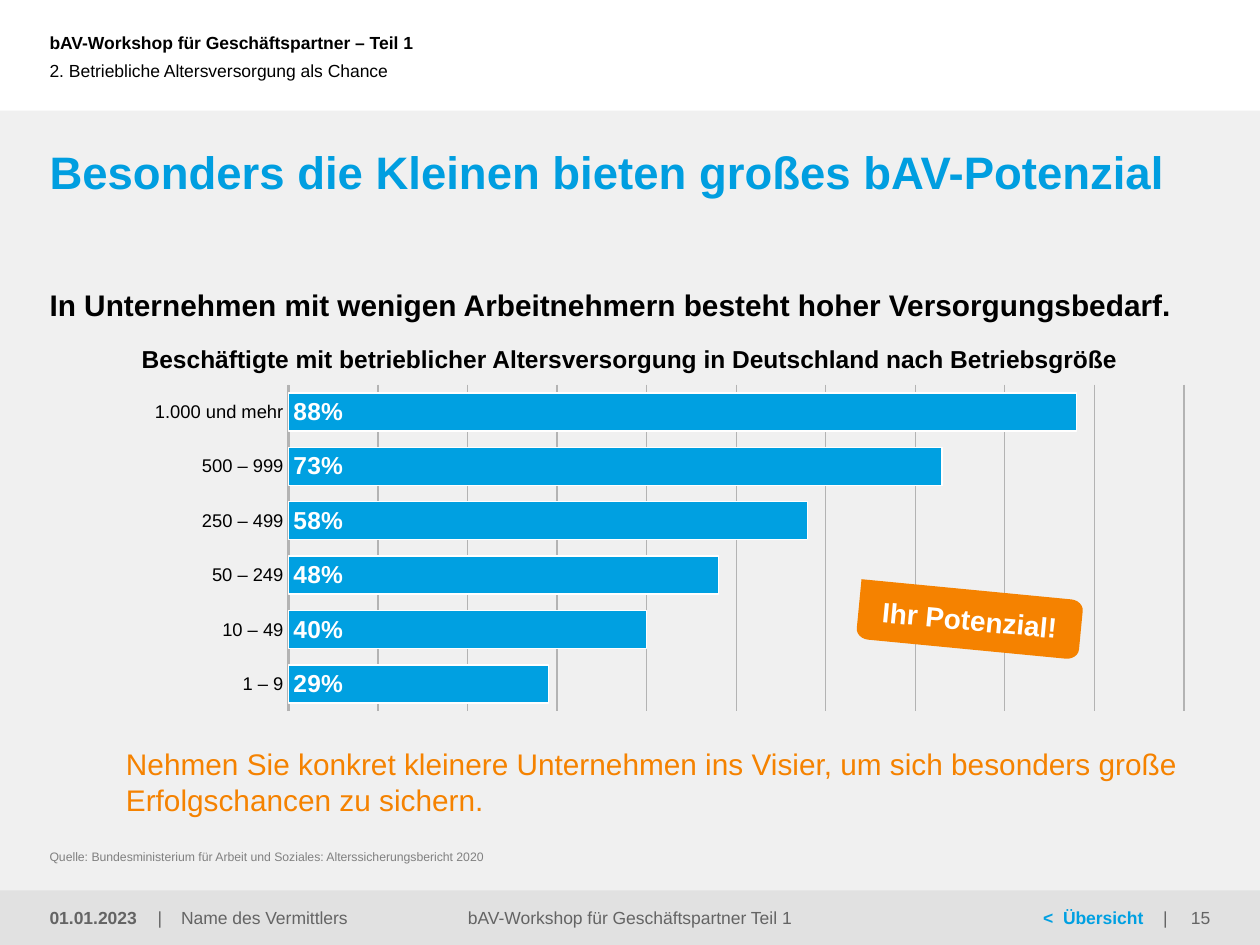
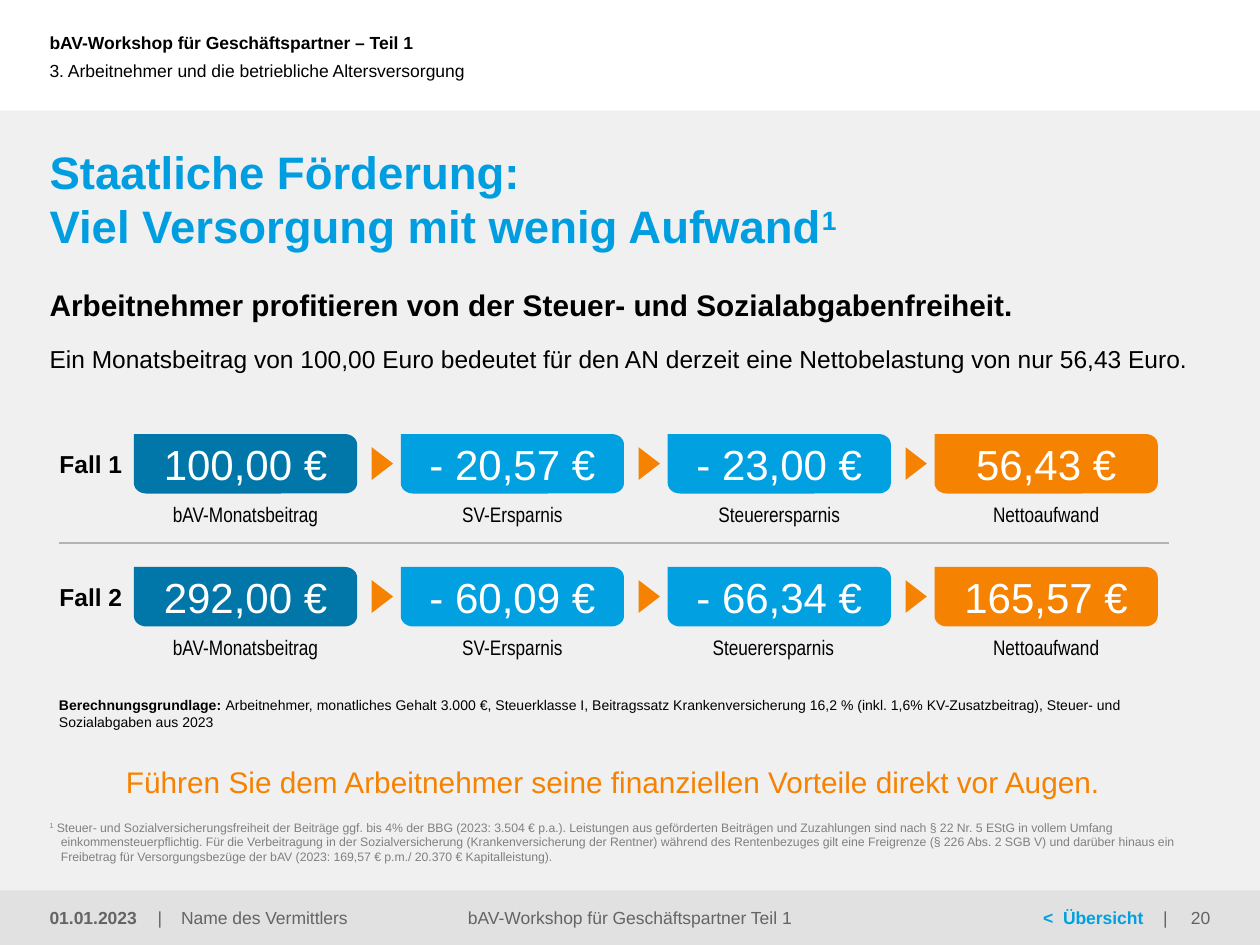
from lxml.etree import SubElement
from pptx import Presentation
from pptx.chart.data import CategoryChartData
from pptx.dml.color import RGBColor
from pptx.enum.chart import XL_CHART_TYPE, XL_LABEL_POSITION, XL_TICK_MARK
from pptx.enum.shapes import MSO_CONNECTOR, MSO_SHAPE
from pptx.enum.text import MSO_ANCHOR, PP_ALIGN
from pptx.oxml.ns import qn
from pptx.util import Cm, Pt

BLACK = RGBColor(0x00, 0x00, 0x00)
WHITE = RGBColor(0xFF, 0xFF, 0xFF)
BLUE = RGBColor(0x00, 0xA0, 0xE1)
HEAD = RGBColor(0x00, 0x9E, 0xE0)
NAVY = RGBColor(0x00, 0x77, 0xA8)
ORANGE = RGBColor(0xF5, 0x82, 0x00)
PALE = RGBColor(0xF0, 0xF0, 0xF0)
FOOT = RGBColor(0xE1, 0xE1, 0xE1)
DARK = RGBColor(0x64, 0x64, 0x64)
GREY = RGBColor(0x80, 0x80, 0x80)
RULE = RGBColor(0xB3, 0xB3, 0xB3)

TOP, MID, LOW = MSO_ANCHOR.TOP, MSO_ANCHOR.MIDDLE, MSO_ANCHOR.BOTTOM
CENTER, RIGHT = PP_ALIGN.CENTER, PP_ALIGN.RIGHT
TAG_W, TAG_H = 4.5, 1.2
ARC_W, ARC_H = 0.25, 0.21


class Deck:
    face = "Arial"
    left, wide = 1, 23.4
    foot_y, foot_h = 17.95, 1.1

    def __init__(self):
        self.show = Presentation()
        self.show.slide_width = Cm(25.4)
        self.show.slide_height = Cm(19.05)
        self.slide = None

    def font(self, font, size, color, bold=False, face=None):
        font.name = face or self.face
        font.size = Pt(size)
        font.bold = bold
        font.color.rgb = color

    def paint(self, shape, color):
        shape.shadow.inherit = False
        shape.fill.solid()
        shape.fill.fore_color.rgb = color
        shape.line.fill.background()

    def block(self, kind, x, y, w, h, color, turn=0):
        shape = self.slide.shapes.add_shape(kind, Cm(x), Cm(y), Cm(w), Cm(h))
        shape.rotation = turn
        self.paint(shape, color)

    def text(self, words, x, y, w, h, size, color=BLACK, bold=False,
             align=None, anchor=TOP, face=None, tabs=(), hang=0):
        box = self.slide.shapes.add_textbox(Cm(x), Cm(y), Cm(w), Cm(h))
        frame = box.text_frame
        frame.word_wrap = True
        frame.vertical_anchor = anchor
        frame.margin_left = frame.margin_right = 0
        frame.margin_top = frame.margin_bottom = 0
        para = frame.paragraphs[0]
        para.alignment = align
        props = para._p.get_or_add_pPr()
        if hang:
            props.set("marL", str(Cm(hang)))
            props.set("indent", str(-Cm(hang)))
        if tabs:
            stops = SubElement(props, qn("a:tabLst"))
            for stop in tabs:
                SubElement(stops, qn("a:tab"), pos=str(Cm(stop)), algn="l")
        self.font(para.font, size, color, bold, face)
        if isinstance(words, str):
            para.text = words
            return
        for part, look in words:
            run = para.add_run()
            run.text = part
            if "bold" in look:
                run.font.bold = look["bold"]
            if "color" in look:
                run.font.color.rgb = look["color"]
            if look.get("sup"):
                run._r.get_or_add_rPr().set("baseline", "30000")
            if look.get("end"):
                para.add_line_break()

    def tag(self, label, x, y, color, size, bold=False, turn=0):
        end, base = x + TAG_W, y + TAG_H
        spots = [(x, y), (end - ARC_W, y), (end, y + ARC_H),
                 (end, base - ARC_H), (end - ARC_W, base),
                 (x + ARC_W, base), (x, base - ARC_H)]
        spots = [(Cm(a), Cm(b)) for a, b in spots]
        pen = self.slide.shapes.build_freeform(*spots[0])
        pen.add_line_segments(spots[1:])
        shape = pen.convert_to_shape()
        steps = list(shape._element.iter(qn("a:lnTo")))
        for step, start in zip(steps[1:6:2], (270, 0, 90)):
            arc = SubElement(step.getparent(), qn("a:arcTo"),
                             wR=str(Cm(ARC_W)), hR=str(Cm(ARC_H)),
                             stAng=str(start * 60000), swAng=str(90 * 60000))
            step.getparent().replace(step, arc)
        shape.rotation = turn
        self.paint(shape, color)
        shape.text_frame.vertical_anchor = MID
        para = shape.text_frame.paragraphs[0]
        para.alignment = CENTER
        self.font(para.font, size, WHITE, bold)
        para.text = label

    def line(self, x, y, end):
        line = self.slide.shapes.add_connector(
            MSO_CONNECTOR.STRAIGHT, Cm(x), Cm(y), Cm(end), Cm(y))
        line.line.color.rgb = RULE
        line.line.width = Pt(1)
        SubElement(line._element.spPr, qn("a:effectLst"))

    def bars(self, names, rates, x, y, w, h, plot_box):
        data = CategoryChartData(number_format="0%")
        data.categories = names
        data.add_series("Series 1", rates)
        chart = self.slide.shapes.add_chart(
            XL_CHART_TYPE.BAR_STACKED, Cm(x), Cm(y), Cm(w), Cm(h), data).chart
        chart.has_legend = chart.has_title = False
        self.font(chart.font, 12, BLACK, face="Arial Narrow")

        names_axis = chart.category_axis
        names_axis.reverse_order = True
        names_axis.major_tick_mark = XL_TICK_MARK.NONE
        names_axis.format.line.color.rgb = RULE
        names_axis.format.line.width = Pt(1.5)
        self.font(names_axis.tick_labels.font, 10.5, BLACK)

        scale = chart.value_axis
        scale.minimum_scale, scale.maximum_scale = 0, 1
        scale.major_unit = 0.1
        scale.has_major_gridlines = True
        scale.major_gridlines.format.line.color.rgb = RULE
        scale.major_gridlines.format.line.width = Pt(0.75)
        scale.visible = False

        plot = chart.plots[0]
        plot.gap_width, plot.overlap = 43, 100
        plot.vary_by_categories = False
        row = plot.series[0]
        row.format.fill.solid()
        row.format.fill.fore_color.rgb = BLUE
        row.format.line.color.rgb = WHITE
        row.format.line.width = Pt(0.75)
        marks = row.data_labels
        marks.show_value = True
        marks.number_format, marks.number_format_is_linked = "0%", False
        marks.position = XL_LABEL_POSITION.INSIDE_BASE
        self.font(marks.font, 14, WHITE, True)

        area = chart._chartSpace.chart.plotArea
        for old in area.findall(qn("c:layout")):
            area.remove(old)
        layout = SubElement(area, qn("c:layout"))
        area.insert(0, layout)
        manual = SubElement(layout, qn("c:manualLayout"))
        pairs = [("layoutTarget", "inner"), ("xMode", "edge"),
                 ("yMode", "edge"), *zip("xywh", plot_box)]
        for key, val in pairs:
            SubElement(manual, qn("c:" + key), val=str(val))

    def page(self, number, part, title, lead, call):
        self.slide = self.show.slides.add_slide(self.show.slide_layouts[6])
        y, h = self.foot_y, self.foot_h
        self.block(MSO_SHAPE.RECTANGLE, 0, 2.23, 25.4, 16.82, PALE)
        self.block(MSO_SHAPE.RECTANGLE, 0, y, 25.4, h, FOOT)
        self.text("bAV-Workshop für Geschäftspartner – Teil 1",
                  self.left, 0.4, 15, 0.9, 10, bold=True, anchor=MID)
        self.text(part, self.left, 0.63, 17, 1.6, 10, anchor=MID)
        self.text(title, self.left, 2.9, self.wide, 1.4, 26, HEAD, True)
        self.text(lead, self.left, 5.79, self.wide, 0.74, 17, bold=True)
        self.text(call, 2.54, 14.99, 21.87, 1.52, 17, ORANGE, anchor=MID)
        self.text("01.01.2023", self.left, y, 2.1, h, 10, DARK, True,
                  anchor=MID)
        self.text("|\tName des Vermittlers", 3.18, y, 6.15, h, 10, DARK,
                  anchor=MID, tabs=[0.47])
        self.text("bAV-Workshop für Geschäftspartner Teil 1", 7.68, y, 10.03,
                  h, 10, DARK, align=CENTER, anchor=MID)
        self.text([("<\tÜbersicht", {"bold": True, "color": BLUE}),
                   ("\t|", {})], 21.03, y, 2.8, h, 10, DARK,
                  anchor=MID, tabs=[0.4, 2.42])
        self.text(str(number), 23.2, y, 1.2, h, 10, DARK,
                  align=RIGHT, anchor=MID)

    def note(self, words, hang=0):
        self.text(words, self.left, 16.4, self.wide, 1.02, 7, GREY,
                  anchor=LOW, hang=hang)

    def case(self, name, sums, y, shifts=(0, 0, 0, 0)):
        self.text(name, 1.2, y + 0.3, 1.5, 0.6, 14, bold=True)
        heads = ("bAV-Monatsbeitrag", "SV-Ersparnis",
                 "Steuerersparnis", "Nettoaufwand")
        colors = (NAVY, BLUE, BLUE, ORANGE)
        for i, (total, head, color) in enumerate(zip(sums, heads, colors)):
            x = 2.7 + 5.38 * i
            self.tag(total, x, y, color, 24)
            self.text(head, x + shifts[i], y + 1.36, TAG_W, 0.5, 12,
                      align=CENTER, face="Arial Narrow")
            if i < len(sums) - 1:
                self.block(MSO_SHAPE.FLOWCHART_MERGE, x + 4.68, y + 0.38,
                           0.66, 0.43, ORANGE, 270)


def main():
    deck = Deck()
    deck.page(
        15, "2. Betriebliche Altersversorgung als Chance",
        "Besonders die Kleinen bieten großes bAV-Potenzial",
        "In Unternehmen mit wenigen Arbeitnehmern besteht hoher "
        "Versorgungsbedarf.",
        "Nehmen Sie konkret kleinere Unternehmen ins Visier, um sich "
        "besonders große Erfolgschancen zu sichern.")
    deck.note("Quelle: Bundesministerium für Arbeit und Soziales: "
              "Alterssicherungsbericht 2020")
    deck.bars(("1.000 und mehr", "500 – 999", "250 – 499", "50 – 249",
               "10 – 49", "1 – 9"), (0.88, 0.73, 0.58, 0.48, 0.4, 0.29),
              1.5, 7.3, 22.38, 8.31, (0.193, 0.055, 0.807, 0.792))
    deck.tag("Ihr Potenzial!", 17.3, 11.89, ORANGE, 16, True, 5.5)
    deck.text("Beschäftigte mit betrieblicher Altersversorgung in Deutschland "
              "nach Betriebsgröße", 2.2, 6.93, 21, 0.81, 14, bold=True,
              align=CENTER)

    deck.page(
        20, "3. Arbeitnehmer und die betriebliche Altersversorgung",
        [("Staatliche Förderung:", {"end": True}),
         ("Viel Versorgung mit wenig Aufwand", {}), ("1", {"sup": True})],
        "Arbeitnehmer profitieren von der Steuer- und Sozialabgabenfreiheit.",
        "Führen Sie dem Arbeitnehmer seine finanziellen Vorteile direkt vor "
        "Augen.")
    deck.text("Ein Monatsbeitrag von 100,00 Euro bedeutet für den AN derzeit "
              "eine Nettobelastung von nur 56,43 Euro.",
              deck.left, 6.93, deck.wide, 0.61, 14)
    deck.case("Fall 1", ("100,00 €", "- 20,57 €", "- 23,00 €", "56,43 €"), 8.75)
    deck.line(1.19, 10.95, 23.57)
    deck.case("Fall 2", ("292,00 €", "- 60,09 €", "- 66,34 €", "165,57 €"),
              11.43, (0, 0, -0.12, 0))
    deck.text([("Berechnungsgrundlage: ", {"bold": True}),
               ("Arbeitnehmer, monatliches Gehalt 3.000 €, Steuerklasse I, "
                "Beitragssatz Krankenversicherung 16,2 % (inkl. 1,6% "
                "KV-Zusatzbeitrag), Steuer- und Sozialabgaben aus 2023", {})],
              1.19, 14.05, 22.2, 0.7, 8)
    deck.note([("1", {"sup": True}),
               (" Steuer- und Sozialversicherungsfreiheit der Beiträge ggf. "
                "bis 4% der BBG (2023: 3.504 € p.a.). Leistungen aus "
                "geförderten Beiträgen und Zuzahlungen sind nach § 22 Nr. 5 "
                "EStG in vollem Umfang einkommensteuerpflichtig. Für die "
                "Verbeitragung in der Sozialversicherung (Krankenversicherung "
                "der Rentner) während des Rentenbezuges gilt eine Freigrenze "
                "(§ 226 Abs. 2 SGB V) und darüber hinaus ein Freibetrag für "
                "Versorgungsbezüge der bAV (2023: 169,57 € p.m./ 20.370 € "
                "Kapitalleistung).", {})], 0.23)
    deck.show.save("out.pptx")


if __name__ == "__main__":
    main()
